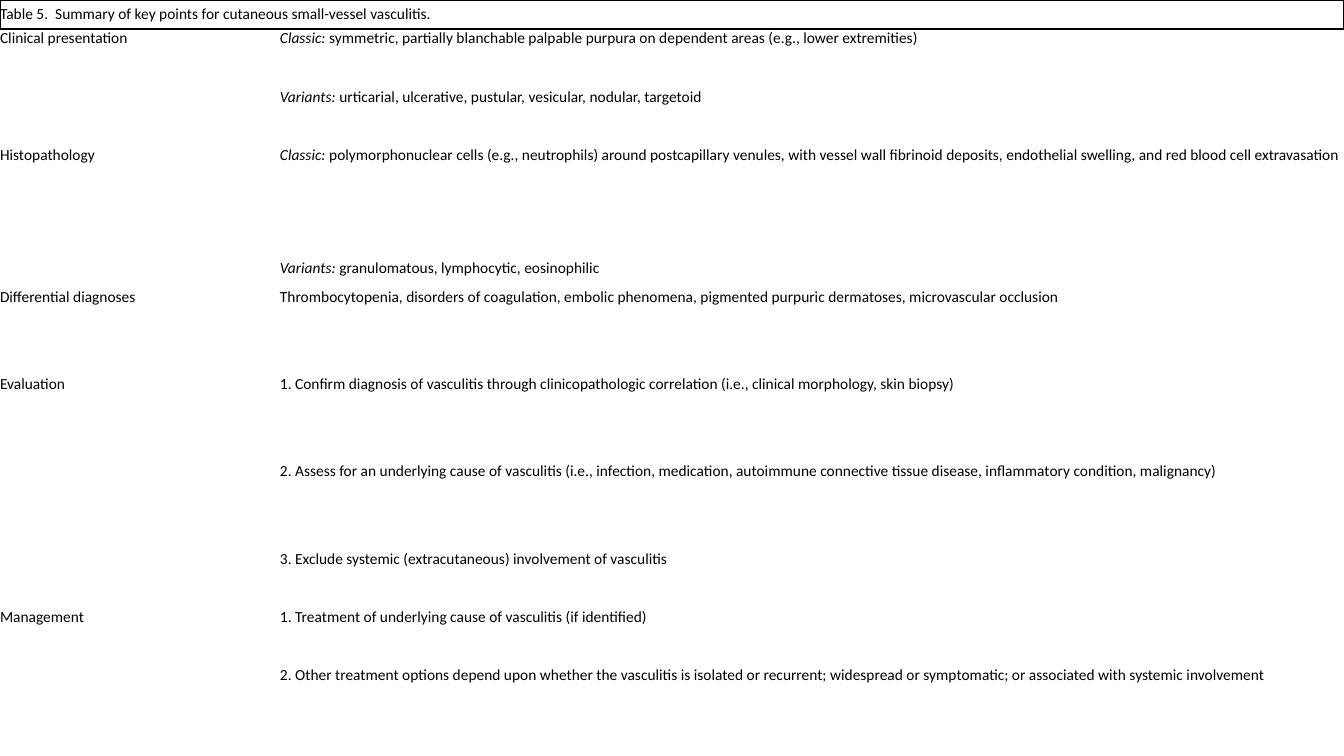
from lxml import etree
from pptx import Presentation
from pptx.dml.color import RGBColor as RGB
from pptx.enum.text import MSO_ANCHOR as Anchor
from pptx.oxml.ns import qn
from pptx.util import Pt

INK = {"text": "000000", "line": "000000"}
NO_GRID = "{2D5ABB26-0587-4C30-8999-92F81FD0307C}"
UNIT = 20.8  # height of a one-line row

# Height, label, italic lead, text
ROWS = [
    (UNIT, "Table 5.  Summary of key points for cutaneous small-vessel vasculitis.", "", ""),
    (2 * UNIT, "Clinical presentation", "Classic:",
     " symmetric, partially blanchable palpable purpura on dependent areas (e.g., lower extremities)"),
    (2 * UNIT, "", "Variants:", " urticarial, ulcerative, pustular, vesicular, nodular, targetoid"),
    (80.6, "Histopathology", "Classic:",
     " polymorphonuclear cells (e.g., neutrophils) around postcapillary venules, with vessel wall "
     "fibrinoid deposits, endothelial swelling, and red blood cell extravasation"),
    (UNIT, "", "Variants:", " granulomatous, lymphocytic, eosinophilic"),
    (3 * UNIT, "Differential diagnoses", "",
     "Thrombocytopenia, disorders of coagulation, embolic phenomena, pigmented purpuric "
     "dermatoses, microvascular occlusion"),
    (3 * UNIT, "Evaluation", "",
     "1. Confirm diagnosis of vasculitis through clinicopathologic correlation "
     "(i.e., clinical morphology, skin biopsy)"),
    (3 * UNIT, "", "",
     "2. Assess for an underlying cause of vasculitis (i.e., infection, medication, autoimmune "
     "connective tissue disease, inflammatory condition, malignancy)"),
    (2 * UNIT, "", "", "3. Exclude systemic (extracutaneous) involvement of vasculitis"),
    (2 * UNIT, "Management", "", "1. Treatment of underlying cause of vasculitis (if identified)"),
    (3 * UNIT, "", "",
     "2. Other treatment options depend upon whether the vasculitis is isolated or recurrent; "
     "widespread or symptomatic; or associated with systemic involvement"),
]


def fill_cell(cell, parts):
    """Write (text, italic) parts into a cell without margins."""
    cell.margin_left = cell.margin_right = cell.margin_top = cell.margin_bottom = 0
    cell.vertical_anchor = Anchor.TOP
    cell.fill.background()
    para = cell.text_frame.paragraphs[0]
    para.font.size = Pt(11)
    # Keeps an empty cell from growing its row
    etree.SubElement(para._p, qn("a:endParaRPr"), sz="1100")
    for text, slant in parts:
        if text:
            run = para.add_run()
            run.text = text
            run.font.size = Pt(11)
            run.font.name = "Calibri"
            run.font.italic = slant
            run.font.color.rgb = RGB.from_string(INK["text"])


def add_edge(cell, side, width):
    """Draw one border line of a cell."""
    props = cell._tc.get_or_add_tcPr()
    edge = etree.SubElement(props, qn("a:ln" + side), w=str(Pt(width)))
    fill = etree.SubElement(edge, qn("a:solidFill"))
    etree.SubElement(fill, qn("a:srgbClr"), val=INK["line"])


# Slide
deck = Presentation()
deck.slide_width, deck.slide_height = Pt(960), Pt(540)
slide = deck.slides.add_slide(deck.slide_layouts[6])

# Table frame
high = sum(row[0] for row in ROWS)
frame = slide.shapes.add_table(len(ROWS), 2, 0, 0, Pt(960), Pt(high))
table = frame.table
table.first_row = table.horz_banding = False
table._tbl.tblPr.find(qn("a:tableStyleId")).text = NO_GRID
for col, width in zip(table.columns, (200, 760)):
    col.width = Pt(width)

# Header borders
title = table.cell(0, 0)
title.merge(table.cell(0, 1))
for side, width in (("L", 1), ("R", 1), ("T", 1), ("B", 1.5)):
    add_edge(title, side, width)

# Cell text
for num, (height, label, lead, text) in enumerate(ROWS):
    table.rows[num].height = Pt(height)
    fill_cell(table.cell(num, 0), [(label, False)])
    fill_cell(table.cell(num, 1), [(lead, True), (text, False)])
title.vertical_anchor = Anchor.MIDDLE

deck.save("out.pptx")
